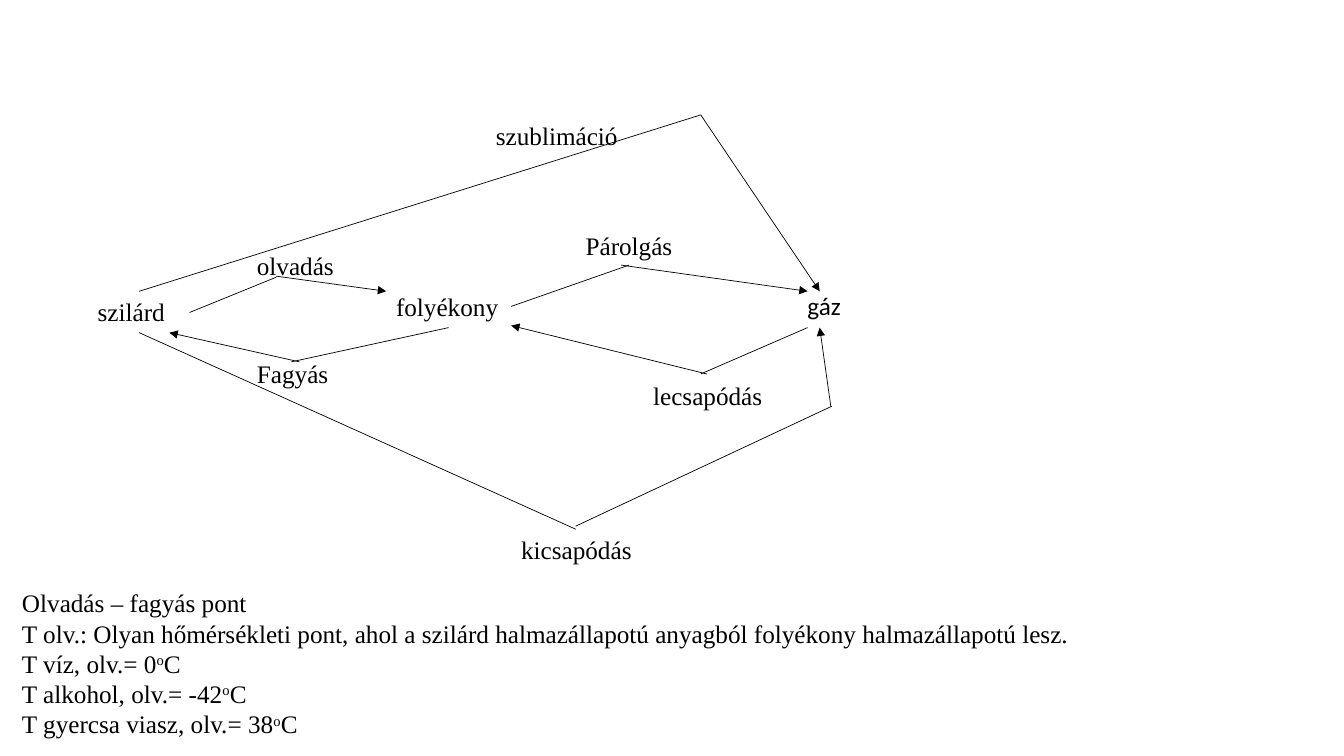
from lxml import etree
from pptx import Presentation
from pptx.dml.color import RGBColor
from pptx.enum.shapes import MSO_CONNECTOR
from pptx.oxml.ns import qn
from pptx.util import Inches, Pt

STRAIGHT = MSO_CONNECTOR.STRAIGHT
BLACK = "000000"
SERIF, SANS = "Times New Roman", "Calibri"
COLS, ROWS = 13.33, 7.5  # grid of one-inch cells
LABEL_H = 0.4

# text, column, row, width, font
LABELS = [
    ("szilárd", 0.87, 2.89, 1.01, SERIF),
    ("folyékony", 3.83, 2.84, 1.24, SERIF),
    ("gáz", 7.91, 2.83, 1.21, SANS),
    ("olvadás", 2.45, 2.43, 0.97, SERIF),
    ("Fagyás", 2.45, 3.51, 1.13, SERIF),
    ("Párolgás", 5.71, 2.24, 1.53, SERIF),
    ("lecsapódás", 6.38, 3.72, 1.41, SERIF),
    ("szublimáció", 4.82, 1.14, 1.42, SERIF),
    ("kicsapódás", 5.07, 5.25, 1.32, SERIF),
]

# plain leg from, to; arrow leg from, to
TRANSITIONS = [
    ((1.88, 3.1), (2.74, 2.75), (2.74, 2.74), (3.83, 2.89)),  # melting
    ((4.45, 3.25), (2.89, 3.59), (2.97, 3.59), (1.68, 3.3)),  # freezing
    ((5.07, 3.04), (6.24, 2.63), (6.16, 2.63), (8.01, 2.89)),  # evaporation
    ((8.01, 3.25), (6.95, 3.71), (7.01, 3.71), (5.07, 3.23)),  # condensation
    ((1.38, 2.89), (6.95, 1.14), (6.95, 1.14), (8.13, 2.89)),  # sublimation
    ((5.71, 5.22), (8.25, 4.03), (8.24, 4.03), (8.13, 3.25)),  # deposition
]
DEPOSITION_START = ((1.38, 3.3), (5.71, 5.25))

NOTES = [
    "Olvadás – fagyás pont",
    "T olv.: Olyan hőmérsékleti pont, ahol a szilárd halmazállapotú anyagból "
    "folyékony halmazállapotú lesz.",
]
MELTING_POINTS = ["T víz, olv.= 0", "T alkohol, olv.= -42", "T gyercsa viasz, olv.= 38"]


def rgb(color):
    return RGBColor.from_string(color)


def grid(*cells):
    return [Inches(n) for n in cells]


def style(p, font):
    p.font.name = font
    p.font.size = Pt(18)
    p.font.color.rgb = rgb(BLACK)


def add_box(s, x, y, w, h):
    tf = s.shapes.add_textbox(*grid(x, y, w, h)).text_frame
    tf.word_wrap = True
    return tf


def add_label(s, text, x, y, w, font):
    p = add_box(s, x, y, w, LABEL_H).paragraphs[0]
    p.text = text
    style(p, font)


def add_line(s, start, end, arrow=False):
    sp = s.shapes.add_connector(STRAIGHT, *grid(*start, *end))
    sp.line.color.rgb = rgb(BLACK)
    sp.line.width = Pt(0.5)
    if arrow:
        ln = sp.line._get_or_add_ln()
        etree.SubElement(ln, qn("a:tailEnd"), type="triangle")
    etree.SubElement(sp._element.spPr, qn("a:effectLst"))


def add_run(p, text, superscript=False):
    r = p.add_run()
    r.text = text
    if superscript:
        r.font._element.set("baseline", "30000")


def add_notes(s):
    tf = add_box(s, 0.12, 5.78, 12.96, 1.62)
    p = tf.paragraphs[0]
    for line in NOTES:
        add_run(p, line)
        style(p, SERIF)
        p = tf.add_paragraph()
    # Melting points share one paragraph
    style(p, SERIF)
    for i, text in enumerate(MELTING_POINTS):
        if i:
            p.add_line_break()
        add_run(p, text)
        add_run(p, "o", superscript=True)
        add_run(p, "C")


def main():
    prs = Presentation()
    prs.slide_width, prs.slide_height = grid(COLS, ROWS)
    s = prs.slides.add_slide(prs.slide_layouts[6])

    # Diagram of the changes of state
    add_line(s, *DEPOSITION_START)
    for start, bend, bend_out, end in TRANSITIONS:
        add_line(s, start, bend)
        add_line(s, bend_out, end, arrow=True)
    for label in LABELS:
        add_label(s, *label)

    # Definition and examples
    add_notes(s)
    prs.save("out.pptx")


if __name__ == "__main__":
    main()
